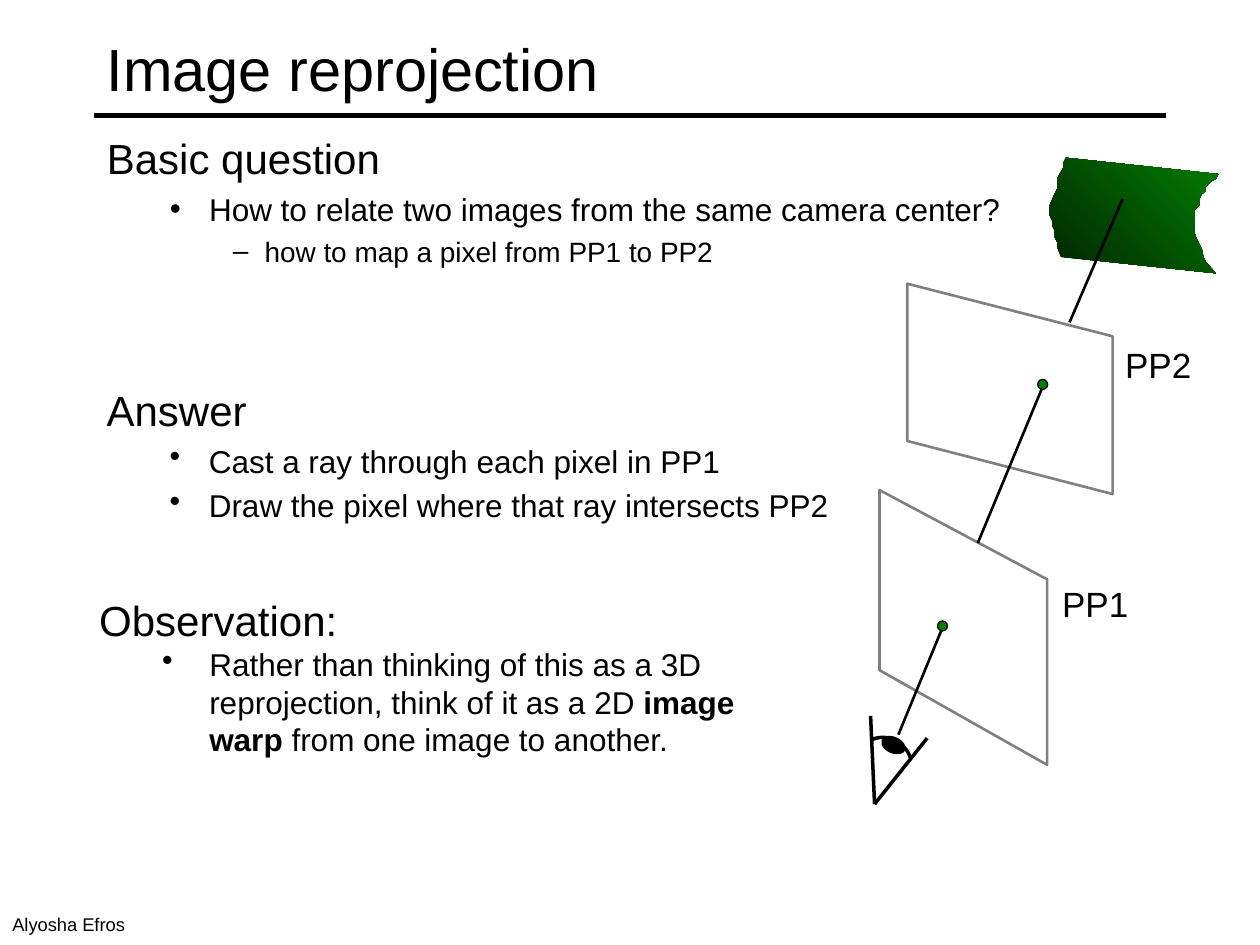
from dataclasses import dataclass

from lxml.etree import SubElement
from pptx import Presentation
from pptx.dml.color import RGBColor
from pptx.enum.shapes import MSO_CONNECTOR as Connector, MSO_SHAPE as Preset
from pptx.enum.text import MSO_ANCHOR as Anchor, MSO_AUTO_SIZE as AutoSize, PP_ALIGN as Align
from pptx.oxml.ns import qn
from pptx.util import Cm, Pt

BLACK = RGBColor(0, 0, 0)
WHITE = RGBColor(0xFF, 0xFF, 0xFF)
GRAY = RGBColor(0x80, 0x80, 0x80)
GREEN = RGBColor(0, 0x80, 0)
SURFACE_DARK = RGBColor(0x01, 0x25, 0x01)
SURFACE_LIGHT = RGBColor(0x03, 0x7C, 0x03)
FONT = "Arial"

Point = tuple[float, float]


@dataclass(frozen=True)
class Style:
    size: float
    margin: float = 0
    hanging: float = 0
    bullet: str = ""
    before: float = 0


@dataclass(frozen=True)
class Item:
    style: Style
    spans: tuple[str, ...]  # every second span is bold
    level: int = 0


@dataclass(frozen=True)
class Segment:
    start: Point
    end: Point
    width: float


HEADING = Style(24, 0.95, 0.95)
POINT = Style(18, 2.06, 0.79, "•", 4)
DETAIL = Style(16, 3.18, 0.64, "–", 4)
REMARK_HEADING = Style(24)
REMARK = Style(18, 2.22, 0.95, "•")
TITLE = Style(34)
LABEL = Style(20)
CREDIT = Style(10.5)

QUESTION = [
    Item(HEADING, ("Basic question",)),
    Item(POINT, ("How to relate two images from the same camera center?",), 1),
    Item(DETAIL, ("how to map a pixel from PP1 to PP2",), 2),
]
ANSWER = [
    Item(HEADING, ("Answer",)),
    Item(POINT, ("Cast a ray through each pixel in PP1",), 1),
    Item(POINT, ("Draw the pixel where that ray intersects PP2",), 1),
]
OBSERVATION = [
    Item(REMARK_HEADING, ("Observation:",)),
    Item(REMARK, ("Rather than thinking of this as a 3D reprojection, think of it as a 2D ",
                  "image warp", " from one image to another."), 1),
]

SURFACE = [
    (21.49, 3.18), (21.44, 3.28), (21.44, 3.38), (21.36, 3.51), (21.31, 3.61),
    (21.31, 3.81), (21.26, 3.91), (21.16, 4.14), (21.16, 4.34), (21.21, 4.45),
    (21.21, 4.55), (21.26, 4.65), (21.26, 4.78), (21.31, 4.88), (21.31, 4.98),
    (21.39, 5.18), (24.51, 5.51), (24.31, 5.28), (24.26, 5.18), (24.23, 5.03),
    (24.13, 4.83), (24.08, 4.7), (24.08, 4.24), (24.18, 4.14), (24.18, 4.01),
    (24.23, 3.91), (24.31, 3.86), (24.31, 3.76), (24.41, 3.66), (24.51, 3.61),
    (24.56, 3.51),
]
PLANES = [
    [(22.43, 6.78), (18.29, 5.72), (18.29, 8.89), (22.43, 9.96)],
    [(17.73, 13.51), (21.11, 15.42), (21.11, 11.68), (17.73, 9.88)],
]
EYE_CORNER = (17.63, 16.21)
EYE_CURVE = [(17.58, 14.91), (17.88, 14.78), (18.24, 14.94), (18.36, 15.29)]
LIDS = [Segment((17.55, 14.43), EYE_CORNER, 2), Segment(EYE_CORNER, (18.69, 14.88), 2)]
RAYS = [
    Segment((21.56, 6.5), (22.63, 4.01), 1.5),
    Segment((19.71, 10.95), (21.03, 7.77), 1.5),
    Segment((18.11, 14.81), (19, 12.65), 1.5),
]
PIXELS = [(21.02, 7.75), (19, 12.62)]
PIXEL_SIZE = 0.2


def place(shape, left: float, top: float, width: float, height: float) -> None:
    shape.left, shape.top, shape.width, shape.height = map(Cm, (left, top, width, height))


def write(frame, items: list[Item]) -> None:
    frame.auto_size = AutoSize.NONE
    for index, item in enumerate(items):
        para = frame.add_paragraph() if index else frame.paragraphs[0]
        style = item.style
        para.level = item.level
        properties = para._p.get_or_add_pPr()
        properties.set("marL", str(Cm(style.margin)))
        properties.set("indent", str(-Cm(style.hanging)))
        if style.bullet:
            SubElement(properties, qn("a:buChar")).set("char", style.bullet)
        else:
            SubElement(properties, qn("a:buNone"))
        para.alignment = Align.LEFT
        para.space_before = Pt(style.before)
        para.font.name = FONT
        para.font.size = Pt(style.size)
        para.font.color.rgb = BLACK
        for number, words in enumerate(item.spans):
            span = para.add_run()
            span.text = words
            if number % 2:
                span.font.bold = True


def add_text(page, items: list[Item], left: float, top: float, width: float,
             height: float, wrap: bool = True) -> None:
    box = page.shapes.add_textbox(Cm(left), Cm(top), Cm(width), Cm(height))
    box.text_frame.word_wrap = wrap
    write(box.text_frame, items)


def add_line(page, segment: Segment) -> None:
    ends = map(Cm, segment.start + segment.end)
    line = page.shapes.add_connector(Connector.STRAIGHT, *ends)
    line.line.color.rgb = BLACK
    line.line.width = Pt(segment.width)
    SubElement(line._element.spPr, qn("a:effectLst"))


def add_outline(page, points: list[Point], close: bool = True):
    """Draw a freeform through the points, without fill or line."""
    first, *rest = [(Cm(x), Cm(y)) for x, y in points]
    builder = page.shapes.build_freeform(*first)
    builder.add_line_segments(rest, close=close)
    shape = builder.convert_to_shape()
    shape.shadow.inherit = False
    shape.fill.background()
    shape.line.fill.background()
    return shape


def add_ellipse(page, center: Point, width: float, height: float,
                fill: RGBColor, line_width: float):
    left, top = center[0] - width / 2, center[1] - height / 2
    ellipse = page.shapes.add_shape(Preset.OVAL, Cm(left), Cm(top), Cm(width), Cm(height))
    ellipse.shadow.inherit = False
    ellipse.fill.solid()
    ellipse.fill.fore_color.rgb = fill
    set_line(ellipse, BLACK, line_width)
    return ellipse


def set_line(shape, color: RGBColor, width: float) -> None:
    shape.line.color.rgb = color
    shape.line.width = Pt(width)


def fill_white(shape) -> None:
    shape.fill.solid()
    shape.fill.fore_color.rgb = WHITE


def curve_points(controls: list[Point], steps: int = 16) -> list[Point]:
    """Sample a cubic Bezier curve."""
    points = []
    for step in range(steps + 1):
        t = step / steps
        weights = ((1 - t) ** 3, 3 * t * (1 - t) ** 2, 3 * t ** 2 * (1 - t), t ** 3)
        points.append(tuple(sum(w * c[axis] for w, c in zip(weights, controls))
                            for axis in (0, 1)))
    return points


def draw_surface(page) -> None:
    surface = add_outline(page, SURFACE)
    surface.fill.gradient()
    surface.fill.gradient_angle = 45
    for stop, color in zip(surface.fill.gradient_stops, (SURFACE_DARK, SURFACE_LIGHT)):
        stop.color.rgb = color


def draw_eye(page) -> None:
    curve = curve_points(EYE_CURVE)
    fill_white(add_outline(page, [EYE_CORNER, *curve]))
    set_line(add_outline(page, curve, close=False), BLACK, 2)
    add_ellipse(page, (18.01, 15.02), 0.3, 0.48, BLACK, 1).rotation = 294
    for lid in LIDS:
        add_line(page, lid)


def main() -> None:
    deck = Presentation()
    deck.slide_width, deck.slide_height = Cm(25.4), Cm(19.05)
    page = deck.slides.add_slide(deck.slide_layouts[1])
    title, body = page.placeholders
    place(title, 1.9, 0.2, 21.6, 2.34)
    title.text_frame.vertical_anchor = Anchor.MIDDLE
    write(title.text_frame, [Item(TITLE, ("Image reprojection",))])
    place(body, 1.9, 2.54, 21.6, 14.6)
    write(body.text_frame, QUESTION)
    add_line(page, Segment((1.9, 2.33), (23.5, 2.33), 3))

    draw_surface(page)
    for corners in PLANES:
        plane = add_outline(page, corners)
        fill_white(plane)
        set_line(plane, GRAY, 1.5)
    draw_eye(page)
    for ray in RAYS:
        add_line(page, ray)
    for center in PIXELS:
        add_ellipse(page, center, PIXEL_SIZE, PIXEL_SIZE, GREEN, 0.75)

    add_text(page, [Item(LABEL, ("PP2",))], 22.43, 6.81, 1.85, 1.09, wrap=False)
    add_text(page, [Item(LABEL, ("PP1",))], 21.16, 11.61, 1.85, 1.09, wrap=False)
    add_text(page, ANSWER, 1.9, 7.62, 17.15, 3.38)
    add_text(page, OBSERVATION, 1.75, 11.86, 13.8, 3.58)
    add_text(page, [Item(CREDIT, ("Alyosha Efros",))], 0, 18.29, 7.1, 0.74)
    deck.save("out.pptx")


if __name__ == "__main__":
    main()
